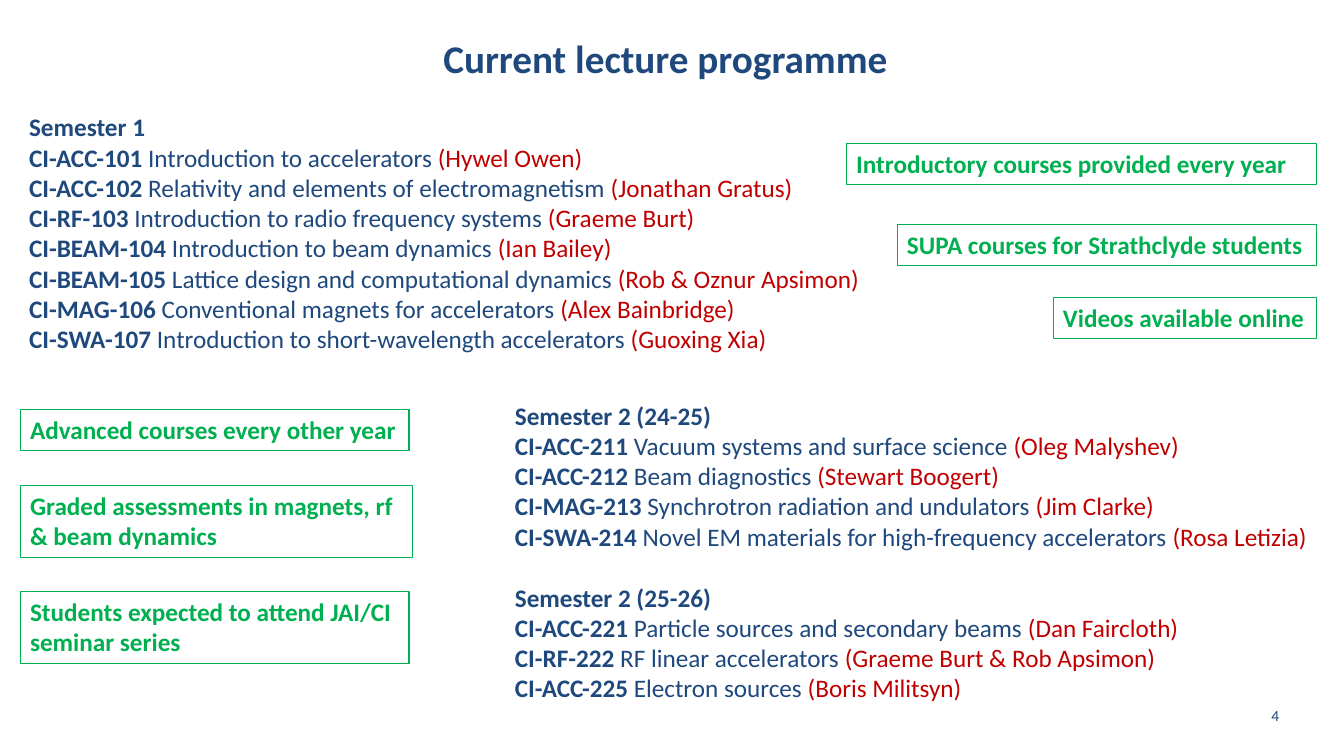
from pptx import Presentation
from pptx.dml.color import RGBColor
from pptx.enum import shapes, text
from pptx.util import Pt

NAVY = RGBColor(0x1F, 0x49, 0x7D)
RED = RGBColor(0xC0, 0x00, 0x00)
GREEN = RGBColor(0x00, 0xB0, 0x50)
FONT = "Calibri"
BODY_SIZE = 18
LINE_HEIGHT = 22

# Content: each semester is a heading and its courses (code, title, lecturer)
SEMESTER_1 = ("Semester 1", [
    ("CI-ACC-101", "Introduction to accelerators", "Hywel Owen"),
    ("CI-ACC-102", "Relativity and elements of electromagnetism", "Jonathan Gratus"),
    ("CI-RF-103", "Introduction to radio frequency systems", "Graeme Burt"),
    ("CI-BEAM-104", "Introduction to beam dynamics", "Ian Bailey"),
    ("CI-BEAM-105", "Lattice design and computational dynamics", "Rob & Oznur Apsimon"),
    ("CI-MAG-106", "Conventional magnets for accelerators", "Alex Bainbridge"),
    ("CI-SWA-107", "Introduction to short-wavelength accelerators", "Guoxing Xia"),
])
SEMESTER_2_FIRST = ("Semester 2 (24-25)", [
    ("CI-ACC-211", "Vacuum systems and surface science", "Oleg Malyshev"),
    ("CI-ACC-212", "Beam diagnostics", "Stewart Boogert"),
    ("CI-MAG-213", "Synchrotron radiation and undulators", "Jim Clarke"),
    ("CI-SWA-214", "Novel EM materials for high-frequency accelerators", "Rosa Letizia"),
])
SEMESTER_2_SECOND = ("Semester 2 (25-26)", [
    ("CI-ACC-221", "Particle sources and secondary beams", "Dan Faircloth"),
    ("CI-RF-222", "RF linear accelerators", "Graeme Burt & Rob Apsimon"),
    ("CI-ACC-225", "Electron sources", "Boris Militsyn"),
])
# Course lists: left, top, width, height, semesters
COURSE_LISTS = [
    (13.7, 76.3, 613.4, 181.4, [SEMESTER_1]),
    (360.7, 282.2, 584.6, 225.4, [SEMESTER_2_FIRST, SEMESTER_2_SECOND]),
]
# Notes: text, top, width, lines
RIGHT_NOTES = [
    ("Introductory courses provided every year", 102.4, 335.8, 1),
    ("SUPA courses for Strathclyde students", 160.4, 299.5, 1),
    ("Videos available online", 212.5, 188.1, 1),
]
LEFT_NOTES = [
    ("Advanced courses every other year", 292.4, 277.8, 1),
    ("Graded assessments in magnets, rf\n& beam dynamics", 346.8, 280.2, 2),
    ("Students expected to attend JAI/CI seminar series", 422.5, 277.8, 2),
]
NOTES_LEFT, NOTES_RIGHT = 14.4, 940.3


def style(font, size, color, bold=False):
    font.name = FONT
    font.size = Pt(size)
    font.color.rgb = color
    font.bold = bold


def add_text(slide, box, content, size, color, bold=False, wrap=True):
    shape = slide.shapes.add_textbox(*map(Pt, box))
    frame = shape.text_frame
    frame.word_wrap = wrap
    frame.text = content
    for paragraph in frame.paragraphs:
        for run in paragraph.runs:
            style(run.font, size, color, bold)
    return shape


def add_course_list(slide, box, semesters):
    frame = slide.shapes.add_textbox(*map(Pt, box)).text_frame
    frame.word_wrap = True
    for index, (heading, courses) in enumerate(semesters):
        paragraph = frame.add_paragraph() if index else frame.paragraphs[0]
        if index:
            paragraph.space_before = Pt(LINE_HEIGHT)
        paragraph.text = heading
        style(paragraph.runs[0].font, BODY_SIZE, NAVY, True)
        for code, title, lecturer in courses:
            paragraph = frame.add_paragraph()
            for words, color, bold in ((code, NAVY, True), (f" {title} ", NAVY, False),
                                       (f"({lecturer})", RED, False)):
                run = paragraph.add_run()
                run.text = words
                style(run.font, BODY_SIZE, color, bold)


def add_note(slide, left, top, width, lines, content):
    height = 7.2 + lines * LINE_HEIGHT
    shape = slide.shapes.add_shape(shapes.MSO_SHAPE.RECTANGLE,
                                   Pt(left), Pt(top), Pt(width), Pt(height))
    shape.shadow.inherit = False
    shape.fill.background()
    shape.line.color.rgb = GREEN
    shape.line.width = Pt(0.75)
    frame = shape.text_frame
    frame.word_wrap = lines > 1
    frame.vertical_anchor = text.MSO_ANCHOR.TOP
    frame.text = content
    for paragraph in frame.paragraphs:
        paragraph.alignment = text.PP_ALIGN.LEFT
        style(paragraph.runs[0].font, BODY_SIZE, GREEN, True)


def main():
    presentation = Presentation()
    presentation.slide_width, presentation.slide_height = Pt(960), Pt(540)
    slide = presentation.slides.add_slide(presentation.slide_layouts[6])

    # Title and page number
    add_text(slide, (309.6, 20.9, 335.5, 41), "Current lecture programme",
             28, NAVY, bold=True, wrap=False)
    number = add_text(slide, (882, 496.8, 38.9, 28.8), "4", 11, NAVY)
    number.text_frame.vertical_anchor = text.MSO_ANCHOR.MIDDLE
    number.text_frame.paragraphs[0].alignment = text.PP_ALIGN.RIGHT

    # Course lists
    for *box, semesters in COURSE_LISTS:
        add_course_list(slide, box, semesters)

    # Green notes, flush with the right and left edges
    for content, top, width, lines in RIGHT_NOTES:
        add_note(slide, NOTES_RIGHT - width, top, width, lines, content)
    for content, top, width, lines in LEFT_NOTES:
        add_note(slide, NOTES_LEFT, top, width, lines, content)

    presentation.save("out.pptx")


if __name__ == "__main__":
    main()
